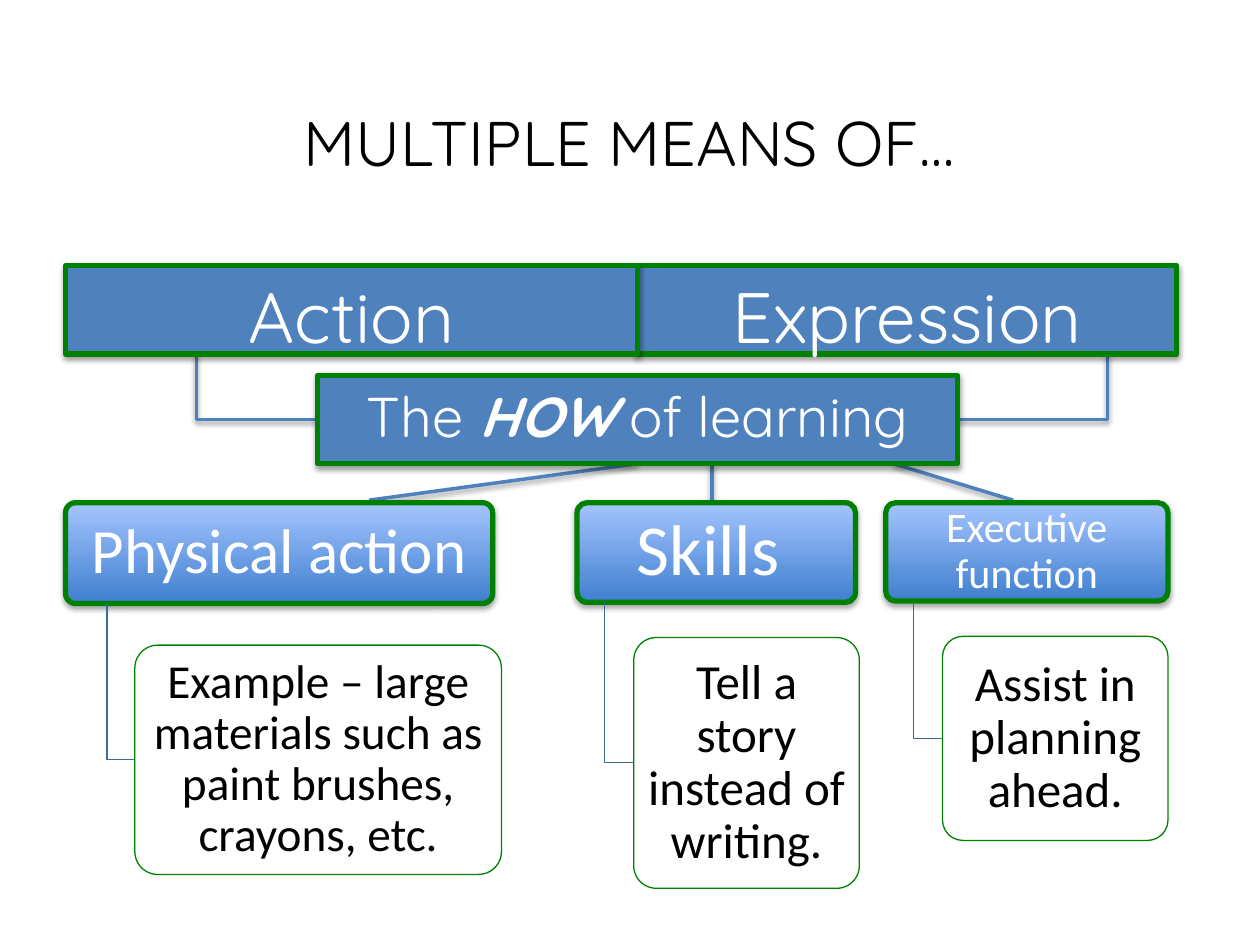
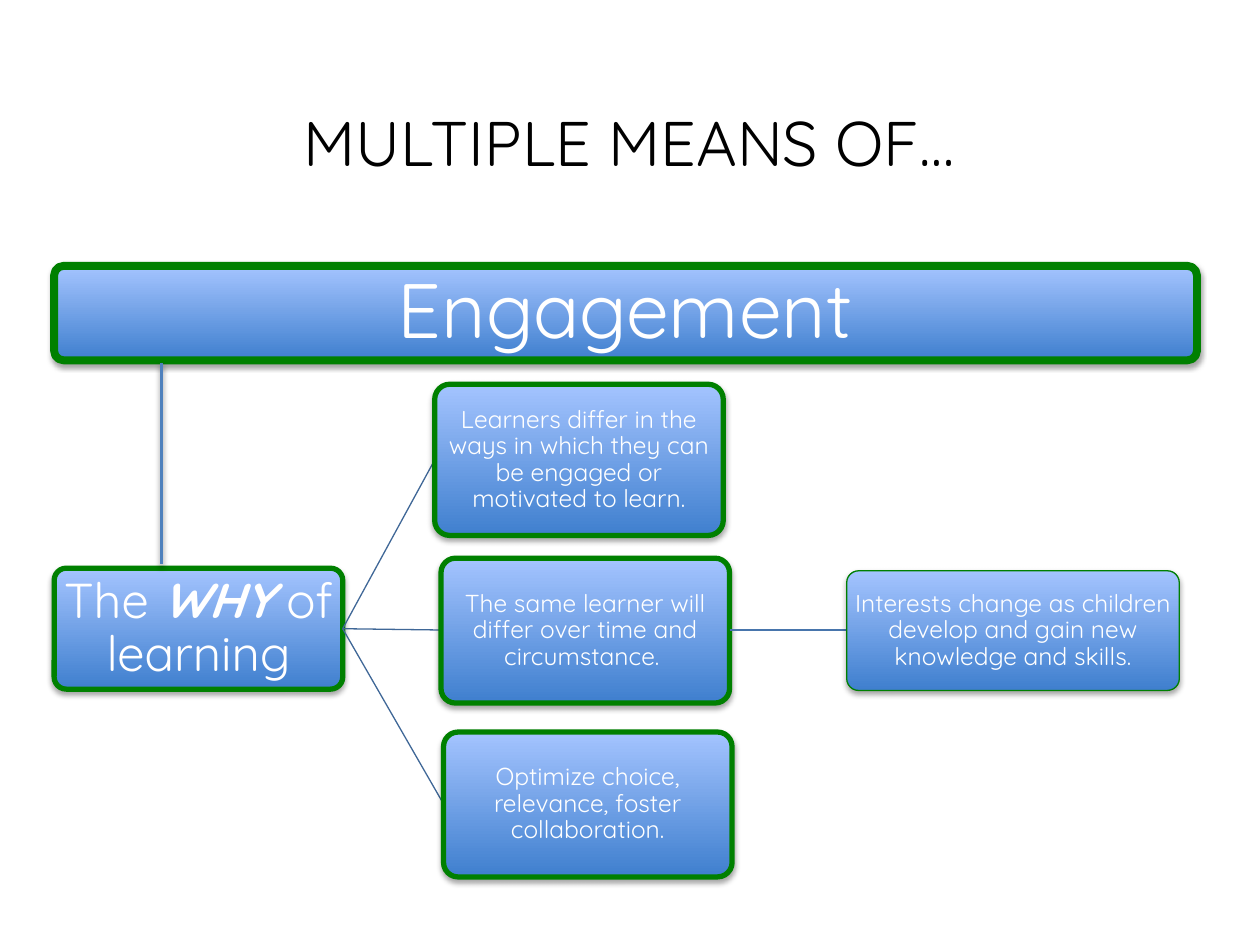
from dataclasses import dataclass
from typing import Optional

from lxml.etree import SubElement
from pptx import Presentation
from pptx.dml.color import RGBColor
from pptx.enum.shapes import MSO_CONNECTOR, MSO_SHAPE
from pptx.enum.text import MSO_ANCHOR, PP_ALIGN
from pptx.oxml.ns import qn
from pptx.slide import Slide
from pptx.util import Pt

# Shared scale, colours and fonts
PX = 9144  # 100 px to the inch
WHITE = RGBColor(0xFF, 0xFF, 0xFF)
BLACK = RGBColor(0x00, 0x00, 0x00)
GREEN = RGBColor(0x00, 0x80, 0x00)
BLUE = RGBColor(0x4F, 0x81, 0xBD)
DEEP_BLUE = RGBColor(0x3F, 0x7F, 0xCE)
PALE_BLUE = RGBColor(0xA4, 0xC4, 0xFF)
BRANCH_BLUE = RGBColor(0x3F, 0x67, 0x97)
LINK_BLUE = RGBColor(0x48, 0x75, 0xAC)
QUICKSAND = "Quicksand"
CALIBRI = "Calibri"


@dataclass(frozen=True)
class Rect:
    left: int
    top: int
    width: int
    height: int

    @property
    def right(self) -> int:
        return self.left + self.width

    @property
    def bottom(self) -> int:
        return self.top + self.height

    @property
    def middle(self) -> int:
        return self.top + self.height // 2


@dataclass(frozen=True)
class Shadow:
    blur: float
    distance: float
    opacity: int


@dataclass(frozen=True)
class BoxStyle:
    preset: MSO_SHAPE
    fill: Optional[RGBColor]  # None stands for the blue gradient
    text_color: RGBColor
    font: str
    anchor: MSO_ANCHOR
    line_spacing: float
    shadow: Optional[Shadow]
    border: float = 3


@dataclass(frozen=True)
class Box:
    rect: Rect
    runs: tuple[str, ...]  # every second run is emphasised
    size: float
    inset: tuple[int, int]
    border: Optional[float] = None


FLAT_SHADOW = Shadow(3.15, 1.57, 38)
RAISED_SHADOW = Shadow(3.15, 1.81, 35)
ROUND = MSO_SHAPE.ROUNDED_RECTANGLE
BAR = BoxStyle(MSO_SHAPE.RECTANGLE, BLUE, WHITE, QUICKSAND, MSO_ANCHOR.TOP, 1.0, FLAT_SHADOW)
HEADING = BoxStyle(ROUND, None, WHITE, CALIBRI, MSO_ANCHOR.MIDDLE, 0.9, RAISED_SHADOW)
EXAMPLE = BoxStyle(ROUND, WHITE, BLACK, CALIBRI, MSO_ANCHOR.MIDDLE, 0.9, None, 0.75)
NODE = BoxStyle(ROUND, None, WHITE, QUICKSAND, MSO_ANCHOR.MIDDLE, 0.9, RAISED_SHADOW)


def add_run(paragraph, text: str, font: str, size: float, color: RGBColor,
            emphasis: bool = False) -> None:
    run = paragraph.add_run()
    run.text = text
    run.font.name = font
    run.font.size = Pt(size)
    run.font.color.rgb = color
    run.font.bold = run.font.italic = emphasis


def set_shadow(properties, shadow: Optional[Shadow]) -> None:
    effects = properties.find(qn("a:effectLst"))
    if effects is None:
        effects = SubElement(properties, qn("a:effectLst"))
    if shadow:
        outer = SubElement(effects, qn("a:outerShdw"), blurRad=str(Pt(shadow.blur)),
                           dist=str(Pt(shadow.distance)), dir="5400000", rotWithShape="0")
        color = SubElement(outer, qn("a:srgbClr"), val="000000")
        SubElement(color, qn("a:alpha"), val=str(shadow.opacity * 1000))


def add_box(slide: Slide, box: Box, style: BoxStyle) -> None:
    rect = box.rect
    shape = slide.shapes.add_shape(style.preset, rect.left * PX, rect.top * PX,
                                   rect.width * PX, rect.height * PX)
    if style.preset == ROUND:
        shape.adjustments[0] = 0.1
    if style.fill is None:
        shape.fill.gradient()
        shape.fill.gradient_angle = 90
        for stop, color in zip(shape.fill.gradient_stops, (DEEP_BLUE, PALE_BLUE)):
            stop.color.rgb = color
    else:
        shape.fill.solid()
        shape.fill.fore_color.rgb = style.fill
    shape.line.color.rgb = GREEN
    shape.line.width = Pt(box.border or style.border)
    shape.shadow.inherit = False
    set_shadow(shape._element.spPr, style.shadow)

    frame = shape.text_frame
    frame.word_wrap = True
    frame.vertical_anchor = style.anchor
    frame.margin_left = frame.margin_right = box.inset[0] * PX
    frame.margin_top = frame.margin_bottom = box.inset[1] * PX
    paragraph = frame.paragraphs[0]
    paragraph.alignment = PP_ALIGN.CENTER
    paragraph.line_spacing = style.line_spacing
    for index, text in enumerate(box.runs):
        add_run(paragraph, text, style.font, box.size, style.text_color, index % 2 == 1)


def add_line(slide: Slide, start: tuple[int, int], end: tuple[int, int],
             color: RGBColor = BLUE, width: float = 2,
             shadow: Optional[Shadow] = FLAT_SHADOW, bent: bool = False) -> None:
    kind = MSO_CONNECTOR.ELBOW if bent else MSO_CONNECTOR.STRAIGHT
    line = slide.shapes.add_connector(kind, start[0] * PX, start[1] * PX,
                                      end[0] * PX, end[1] * PX)
    line.line.color.rgb = color
    line.line.width = Pt(width)
    properties = line._element.spPr
    if bent:  # turn at the start: down first, then across
        guides = properties.find(qn("a:prstGeom")).find(qn("a:avLst"))
        SubElement(guides, qn("a:gd"), name="adj1", fmla="val 0")
    set_shadow(properties, shadow)


def add_branch(slide: Slide, heading: Rect, example: Rect) -> None:
    stem = heading.left + heading.width // 10
    builder = slide.shapes.build_freeform(stem, heading.bottom, scale=PX)
    builder.add_line_segments([(stem, example.middle), (example.left, example.middle)],
                              close=False)
    branch = builder.convert_to_shape()
    branch.fill.background()
    branch.line.color.rgb = BRANCH_BLUE
    branch.line.width = Pt(0.75)
    branch.shadow.inherit = False


def add_titled_slide(deck) -> Slide:
    slide = deck.slides.add_slide(deck.slide_layouts[5])
    title = slide.shapes.title
    title.left, title.top, title.width, title.height = (
        value * PX for value in (36, 50, 927, 125))
    title.text_frame.vertical_anchor = MSO_ANCHOR.MIDDLE
    paragraph = title.text_frame.paragraphs[0]
    paragraph.alignment = PP_ALIGN.CENTER
    add_run(paragraph, "MULTIPLE MEANS OF…", QUICKSAND, 36, BLACK)
    return slide


def build_action_slide(deck) -> None:
    slide = add_titled_slide(deck)
    action = Rect(52, 211, 454, 70)
    expression = Rect(506, 211, 428, 70)
    how = Rect(252, 298, 508, 70)

    # Lines from the bars to the "how" bar and on to the headings
    for start_x, end_x in ((506, 293), (565, 565), (709, 804)):
        add_line(slide, (start_x, how.bottom), (end_x, 397))
    for start_x, end_x in ((156, how.left), (879, how.right)):
        add_line(slide, (start_x, action.bottom), (end_x, how.middle), bent=True)

    # Headings, each with an example below
    columns = (
        (Box(Rect(52, 399, 339, 80), ("Physical action",), 36, (7, 5)),
         Box(Rect(107, 512, 291, 182),
             ("Example – large materials such as paint brushes, crayons, etc.",), 27, (6, 4))),
        (Box(Rect(458, 399, 221, 79), ("Skills ",), 41, (9, 6)),
         Box(Rect(503, 506, 179, 199), ("Tell a story instead of writing.",), 28, (6, 4))),
        (Box(Rect(703, 399, 224, 78), ("Executive function",), 24, (5, 3)),
         Box(Rect(748, 505, 179, 162), ("Assist in planning ahead.",), 28, (6, 4))),
    )
    for heading, example in columns:
        add_box(slide, heading, HEADING)
        add_branch(slide, heading.rect, example.rect)
        add_box(slide, example, EXAMPLE)

    # Bars
    bar_inset = (10, 5)
    for bar in (Box(expression, ("Expression",), 40.7, bar_inset),
                Box(action, ("Action",), 40.7, bar_inset),
                Box(how, ("The ", "HOW", " of learning"), 32, bar_inset)):
        add_box(slide, bar, BAR)


def build_engagement_slide(deck) -> None:
    slide = add_titled_slide(deck)
    why = Rect(43, 451, 229, 96)
    differ_over_time = Rect(350, 443, 229, 115)
    interests = Rect(672, 453, 264, 95)

    # Banner and the "why" hub
    add_box(slide, Box(Rect(43, 211, 907, 75), ("Engagement",), 44, (3, 3), 4.5), NODE)
    add_box(slide, Box(why, ("The ", "WHY ", "of learning"), 28, (2, 2)), NODE)

    # Reasons that branch from the hub
    reasons = (
        (Rect(345, 305, 229, 120),
         "Learners differ in the ways in which they can be engaged or motivated to learn."),
        (differ_over_time, "The same learner will differ over time and circumstance. "),
        (Rect(352, 581, 229, 115), "Optimize choice, relevance, foster collaboration."),
    )
    for rect, reason in reasons:
        add_line(slide, (why.right, why.middle), (rect.left, rect.middle),
                 BRANCH_BLUE, 0.75, None)
        add_box(slide, Box(rect, (reason,), 14, (1, 1)), NODE)

    # Consequence of the middle reason
    add_line(slide, (differ_over_time.right, differ_over_time.middle),
             (interests.left, interests.middle), LINK_BLUE, 0.75, None)
    add_box(slide, Box(interests, (
        "Interests change as children develop and gain new knowledge and skills.",),
        14, (1, 1), 0.75), NODE)

    # Line from the banner to the hub
    add_line(slide, (128, 288), (128, 448))


def main() -> None:
    deck = Presentation()
    deck.slide_width, deck.slide_height = 1000 * PX, 750 * PX
    build_action_slide(deck)
    build_engagement_slide(deck)
    deck.save("out.pptx")


if __name__ == "__main__":
    main()
